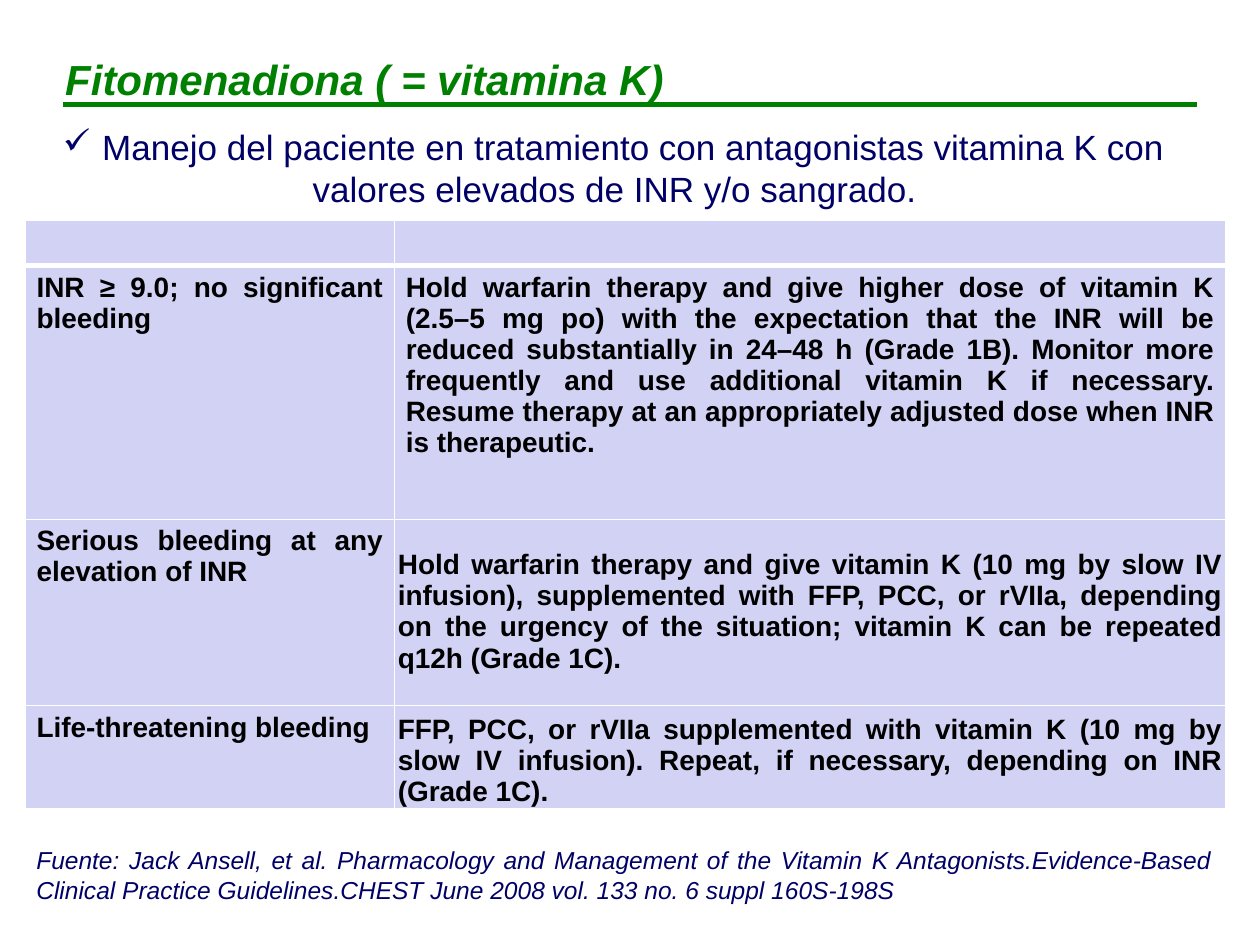
from dataclasses import dataclass

from lxml.etree import SubElement
from pptx import Presentation
from pptx.dml.color import RGBColor
from pptx.enum.shapes import MSO_CONNECTOR as CONN
from pptx.enum.text import MSO_ANCHOR as ANCHOR, MSO_AUTO_SIZE as AUTO, PP_ALIGN as ALIGN
from pptx.oxml import parse_xml
from pptx.oxml.ns import nsdecls, qn
from pptx.util import Pt

COLORS = {"green": "008000", "navy": "000066", "black": "000000",
          "white": "FFFFFF", "lavender": "D2D2F4"}
FONT = "Arial"


@dataclass(frozen=True)
class Label:
    text: str
    box: tuple[float, float, float, float]
    size: float
    color: str
    align: ALIGN = ALIGN.JUSTIFY
    bold: bool = False
    italic: bool = False
    bullet: str = ""
    inset_top: float = 3.6


@dataclass(frozen=True)
class CellText:
    text: str = ""
    margins: tuple[float, float, float, float] = (6.5, 3.6, 6.5, 3.6)
    anchor: ANCHOR = ANCHOR.TOP


TITLE = Label("Fitomenadiona ( = vitamina K)", (30.2, 23.8, 653.8, 36.7), 24, "green",
              bold=True, italic=True, inset_top=7)
SUBTITLE = Label(" Manejo del paciente en tratamiento con antagonistas vitamina K con "
                 "valores elevados de INR y/o sangrado.",
                 (25.2, 68.4, 652.3, 79.9), 20, "navy", ALIGN.CENTER, bullet="✓")
SOURCE = Label("Fuente: Jack Ansell, et al. Pharmacology and Management of the Vitamin K "
               "Antagonists.Evidence-Based Clinical Practice Guidelines.CHEST June 2008 "
               "vol. 133 no. 6 suppl 160S-198S",
               (13.7, 479.5, 686.2, 67), 14, "navy", italic=True)

BLANK = CellText(margins=(0, 0, 0, 0))
COL_WIDTHS = (211, 475.2)
ROW_HEIGHTS = (25.9, 144.9, 106.4, 59)
ROWS = (
    (BLANK, BLANK),
    (CellText("INR ≥ 9.0; no significant bleeding"),
     CellText("Hold warfarin therapy and give higher dose of vitamin K (2.5–5 mg po) with the "
              "expectation that the INR will be reduced substantially in 24–48 h (Grade 1B). "
              "Monitor more frequently and use additional vitamin K if necessary. Resume "
              "therapy at an appropriately adjusted dose when INR is therapeutic.")),
    (CellText("Serious bleeding at any elevation of INR"),
     CellText("Hold warfarin therapy and give vitamin K (10 mg by slow IV infusion), "
              "supplemented with FFP, PCC, or rVIIa, depending on the urgency of the "
              "situation; vitamin K can be repeated q12h (Grade 1C).",
              (2, 0.7, 2, 18), ANCHOR.BOTTOM)),
    (CellText("Life-threatening bleeding"),
     CellText("FFP, PCC, or rVIIa supplemented with vitamin K (10 mg by slow IV infusion). "
              "Repeat, if necessary, depending on INR (Grade 1C).",
              (2, 0.7, 2, 0.7), ANCHOR.BOTTOM)),
)


def rgb(name: str) -> RGBColor:
    return RGBColor.from_string(COLORS[name])


def add_run(p, text: str, size: float, color: str, bold: bool, italic: bool) -> None:
    r = p.add_run()
    r.text = text
    r.font.name, r.font.size = FONT, Pt(size)
    r.font.bold, r.font.italic = bold, italic
    r.font.color.rgb = rgb(color)


def add_label(slide, label: Label) -> None:
    tf = slide.shapes.add_textbox(*map(Pt, label.box)).text_frame
    tf.word_wrap = True
    tf.auto_size = AUTO.SHAPE_TO_FIT_TEXT
    tf.margin_top = Pt(label.inset_top)
    p = tf.paragraphs[0]
    p.alignment = label.align
    if label.bullet:
        SubElement(p._p.get_or_add_pPr(), qn("a:buChar")).set("char", label.bullet)
    add_run(p, label.text, label.size, label.color, label.bold, label.italic)


def set_borders(cell, widths: dict[str, float]) -> None:
    """Draw white cell borders; widths maps L, R, T, B (in that order) to points."""
    tc_pr = cell._tc.get_or_add_tcPr()
    for i, (side, width) in enumerate(widths.items()):
        tc_pr.insert(i, parse_xml(
            f'<a:ln{side} {nsdecls("a")} w="{Pt(width)}"><a:solidFill>'
            f'<a:srgbClr val="{COLORS["white"]}"/></a:solidFill></a:ln{side}>'))


def fill_cell(cell, content: CellText, top: float, bottom: float) -> None:
    cell.fill.solid()
    cell.fill.fore_color.rgb = rgb("lavender")
    set_borders(cell, {"L": 1, "R": 1, "T": top, "B": bottom})
    (cell.margin_left, cell.margin_top,
     cell.margin_right, cell.margin_bottom) = map(Pt, content.margins)
    cell.vertical_anchor = content.anchor
    if content.text:
        p = cell.text_frame.paragraphs[0]
        p.alignment = ALIGN.JUSTIFY
        add_run(p, content.text, 16, "black", True, False)


def add_treatment_table(slide) -> None:
    table = slide.shapes.add_table(len(ROWS), len(COL_WIDTHS), Pt(14.4), Pt(126),
                                   Pt(sum(COL_WIDTHS)), Pt(sum(ROW_HEIGHTS))).table
    table.first_row = table.horz_banding = False
    for column, width in zip(table.columns, COL_WIDTHS):
        column.width = Pt(width)
    for i, (row, height) in enumerate(zip(table.rows, ROW_HEIGHTS)):
        row.height = Pt(height)
        for cell, content in zip(row.cells, ROWS[i]):
            fill_cell(cell, content, top=3 if i == 1 else 1, bottom=3 if i == 0 else 1)


def add_title_rule(slide) -> None:
    line = slide.shapes.add_connector(CONN.STRAIGHT, Pt(36), Pt(59.8), Pt(684), Pt(59.8))
    line.line.color.rgb = rgb("green")
    line.line.width = Pt(3)
    SubElement(line._element.spPr, qn("a:effectLst"))


def main() -> None:
    prs = Presentation()
    prs.slide_width, prs.slide_height = Pt(720), Pt(540)
    slide = prs.slides.add_slide(prs.slide_layouts[6])
    add_treatment_table(slide)
    for label in (SUBTITLE, SOURCE, TITLE):
        add_label(slide, label)
    add_title_rule(slide)
    prs.save("out.pptx")


if __name__ == "__main__":
    main()
